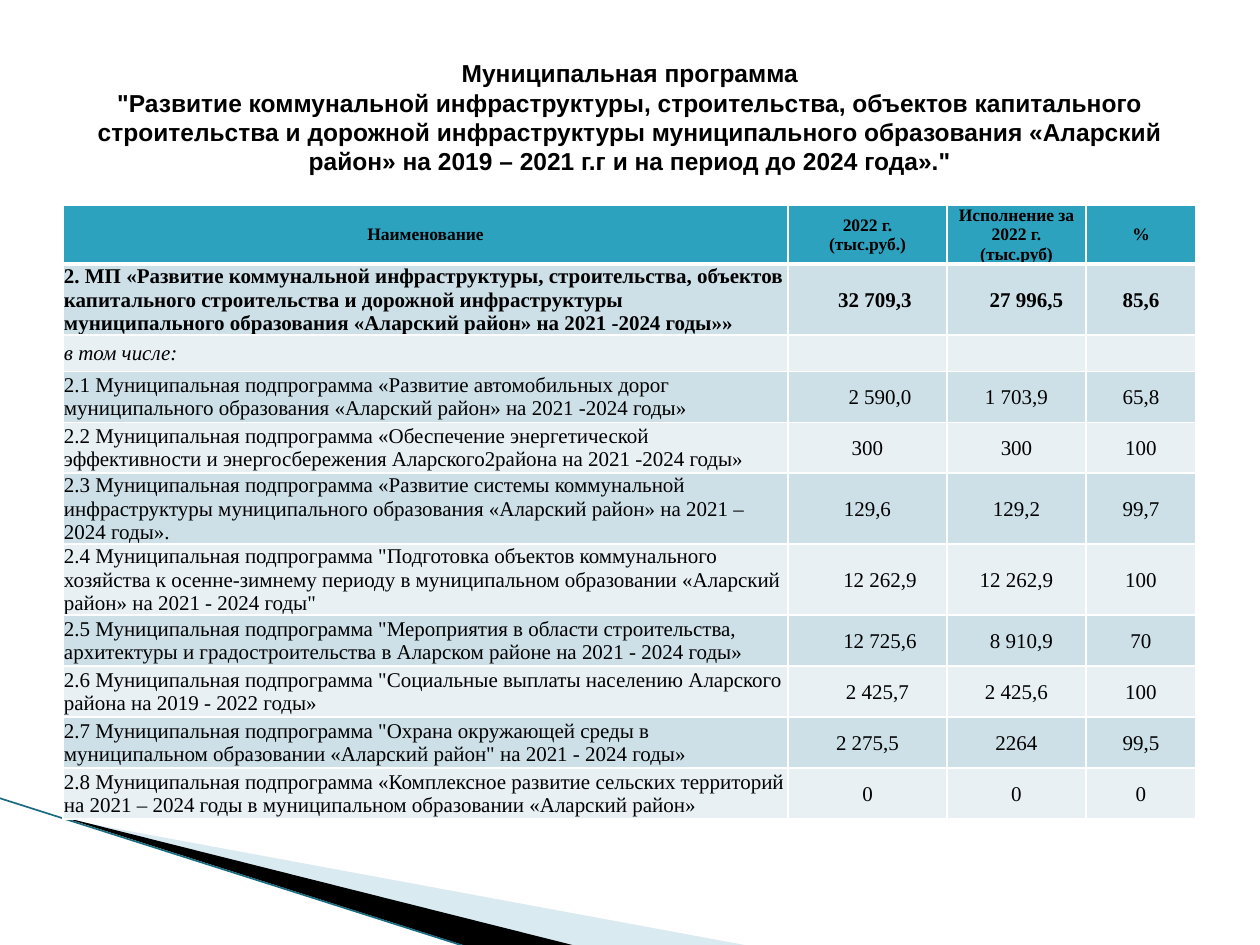
from lxml.etree import SubElement
from pptx import Presentation
from pptx.dml.color import RGBColor
from pptx.enum.shapes import MSO_CONNECTOR as Connector
from pptx.enum.text import MSO_ANCHOR as Anchor, PP_ALIGN as Align
from pptx.oxml.ns import qn
from pptx.util import Pt

PX = 914400 / 126
SPACE = 5
SERIF = "Times New Roman"
COLUMNS = [725, 159, 139, 110]
ROW_HEIGHTS = [58, 71, 32, 51, 51, 71, 71, 51, 51, 51, 51]
BANDS = ["CDE0E8", "E8F0F4"]
TITLE = (
    "Муниципальная программа\v"
    "\"Развитие коммунальной инфраструктуры, строительства, объектов капитального "
    "строительства и дорожной инфраструктуры муниципального образования «Аларский "
    "район» на 2019 – 2021 г.г и на период до 2024 года».\""
)
HEADER = ["Наименование", "2022 г.\n(тыс.руб.)", "Исполнение за 2022 г.\n(тыс.руб)", "%"]
ROWS = [
    ["2. МП «Развитие коммунальной инфраструктуры, строительства, объектов капитального "
     "строительства и дорожной инфраструктуры муниципального образования «Аларский район» "
     "на 2021 -2024 годы»»", "32\u00a0709,3", "27\u00a0996,5", "85,6"],
    ["в том числе:", "", "", ""],
    ["2.1 Муниципальная подпрограмма «Развитие автомобильных дорог муниципального "
     "образования «Аларский район» на 2021 -2024 годы»", "2\u00a0590,0", "1\u00a0703,9", "65,8"],
    ["2.2 Муниципальная подпрограмма «Обеспечение энергетической эффективности и "
     "энергосбережения Аларского2района на 2021 -2024 годы»", "300", "300", "100"],
    ["2.3 Муниципальная подпрограмма «Развитие системы коммунальной инфраструктуры "
     "муниципального образования «Аларский район» на 2021 – 2024 годы».",
     "129,6", "129,2", "99,7"],
    ["2.4 Муниципальная подпрограмма \"Подготовка объектов коммунального хозяйства к "
     "осенне-зимнему периоду в муниципальном образовании «Аларский район» на 2021 - 2024 годы\"",
     "12\u00a0262,9", "12\u00a0262,9", "100"],
    ["2.5 Муниципальная подпрограмма \"Мероприятия в области строительства, архитектуры и "
     "градостроительства в Аларском районе на 2021 - 2024 годы»",
     "12\u00a0725,6", "8\u00a0910,9", "70"],
    ["2.6 Муниципальная подпрограмма \"Социальные выплаты населению Аларского района "
     "на 2019 - 2022 годы»", "2\u00a0425,7", "2\u00a0425,6", "100"],
    ["2.7 Муниципальная подпрограмма \"Охрана окружающей среды в муниципальном образовании "
     "«Аларский район\" на 2021 - 2024 годы»", "2\u00a0275,5", "2264", "99,5"],
    ["2.8 Муниципальная подпрограмма «Комплексное развитие сельских территорий "
     "на 2021 – 2024 годы в муниципальном образовании «Аларский район»", "0", "0", "0"],
]
INDENTS = {(1, 1): 3, (1, 2): 4, (3, 1): 5, (6, 1): 5, (7, 1): 5, (7, 2): 2, (8, 1): 4}


def px(value):
    return round(value * PX)


def color(value):
    return RGBColor.from_string(value)


def format_text(text_frame, size, font, align, bold=False, italic=False):
    for paragraph in text_frame.paragraphs:
        paragraph.alignment = align
        for run in paragraph.runs or [paragraph.add_run()]:
            run.font.size = Pt(size)
            run.font.name = font
            run.font.bold = bold
            run.font.italic = italic
            run.font.color.rgb = color("000000")


def add_wedge(slide, points, fill, alpha=100):
    start, *others = [(px(x), px(y)) for x, y in points]
    builder = slide.shapes.build_freeform(*start)
    builder.add_line_segments(others, close=True)
    shape = builder.convert_to_shape()
    shape.shadow.inherit = False
    shape.line.fill.background()
    shape.fill.solid()
    shape.fill.fore_color.rgb = color(fill)
    if alpha < 100:
        fill_color = shape.element.spPr.find(qn("a:solidFill"))[0]
        SubElement(fill_color, qn("a:alpha"), val=str(alpha * 1000))


def add_line(slide, start, end, line_color, width):
    line = slide.shapes.add_connector(Connector.STRAIGHT, *map(px, start + end))
    line.line.color.rgb = color(line_color)
    line.line.width = Pt(width)
    SubElement(line.element.spPr, qn("a:effectLst"))


def add_title(slide, text, left, top, width, height):
    text_frame = slide.shapes.add_textbox(*map(px, (left, top, width, height))).text_frame
    text_frame.word_wrap = True
    text_frame.vertical_anchor = Anchor.MIDDLE
    text_frame.text = text
    format_text(text_frame, 14, "Arial", Align.CENTER, bold=True)


def set_borders(cell, top, bottom):
    properties = cell._tc.get_or_add_tcPr()
    for side, width in zip("LRTB", (1, 1, top, bottom)):
        border = SubElement(properties, qn(f"a:ln{side}"), w=str(Pt(width)))
        fill = SubElement(border, qn("a:solidFill"))
        SubElement(fill, qn("a:srgbClr"), val="FFFFFF")


def fill_cell(cell, text, row, column):
    is_header = row == 0
    cell.text = text
    cell.vertical_anchor = Anchor.MIDDLE
    cell.margin_left = px(1 + SPACE * INDENTS.get((row, column), 0))
    cell.margin_right = cell.margin_top = px(1)
    cell.margin_bottom = 0
    set_borders(cell, 3 if row == 1 else 1, 3 if is_header else 1)
    cell.fill.solid()
    cell.fill.fore_color.rgb = color("2DA2BF" if is_header else BANDS[(row - 1) % 2])
    align = Align.CENTER if is_header or column else Align.LEFT
    format_text(cell.text_frame, 10 if is_header else 12, SERIF, align,
                bold=row < 2, italic=row == 2)


def add_program_table(slide, left, top):
    size = (sum(COLUMNS), sum(ROW_HEIGHTS))
    table = slide.shapes.add_table(len(ROW_HEIGHTS), len(COLUMNS),
                                   *map(px, (left, top, *size))).table
    for column, width in zip(table.columns, COLUMNS):
        column.width = px(width)
    for row, height in zip(table.rows, ROW_HEIGHTS):
        row.height = px(height)
    for row, texts in enumerate([HEADER, *ROWS]):
        for column, text in enumerate(texts):
            fill_cell(table.cell(row, column), text, row, column)


def main():
    presentation = Presentation()
    presentation.slide_width = px(1260)
    presentation.slide_height = px(945)
    slide = presentation.slides.add_slide(presentation.slide_layouts[6])
    add_wedge(slide, [(69, 820), (750, 946), (575, 946)], "A0CBDC", alpha=40)
    add_wedge(slide, [(67, 818), (576, 946), (469, 947), (68, 819)], "000000")
    add_line(slide, (-1, 798), (467, 947), "1A6B80", 0.95)
    add_program_table(slide, 63, 205)
    add_title(slide, TITLE, 63, 38, 1134, 158)
    presentation.save("out.pptx")


if __name__ == "__main__":
    main()
